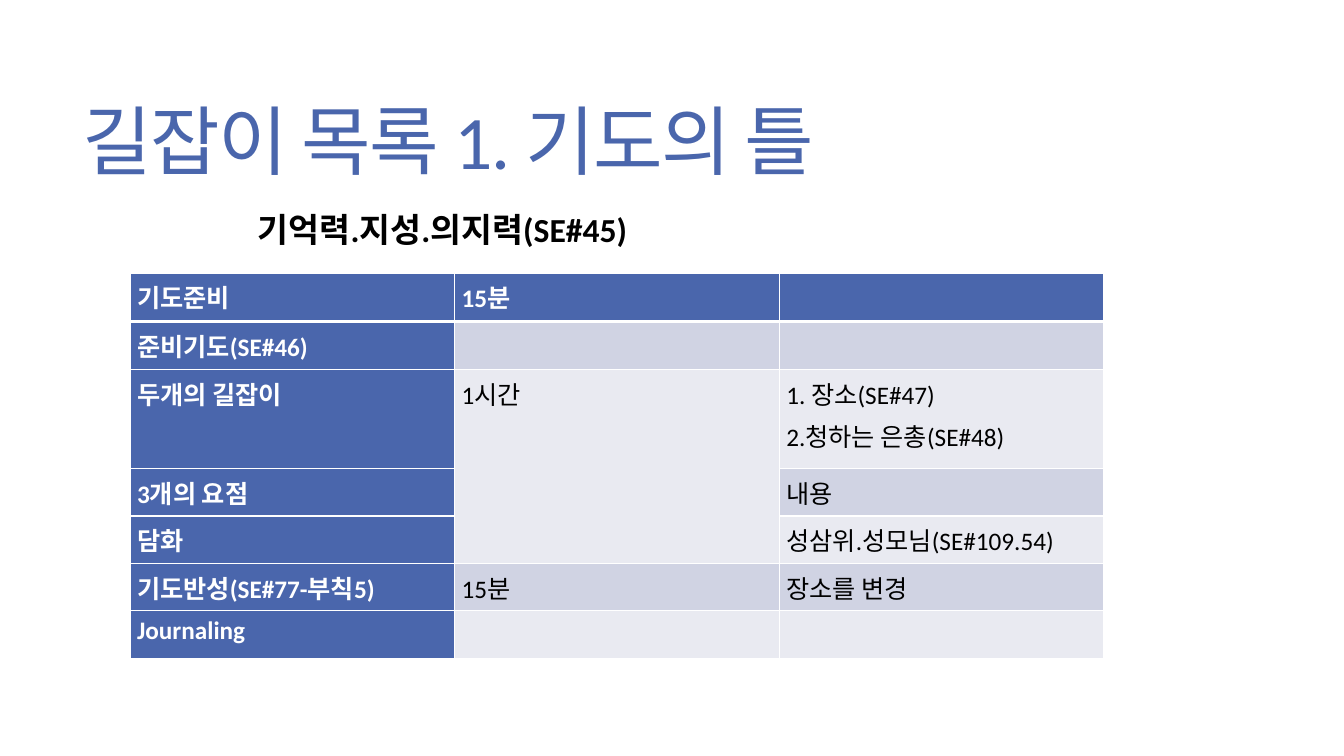
from dataclasses import dataclass

from lxml import etree
from pptx import Presentation
from pptx.dml.color import RGBColor
from pptx.enum.text import MSO_ANCHOR, MSO_AUTO_SIZE, PP_ALIGN
from pptx.oxml.ns import qn
from pptx.util import Inches, Pt

MIDDLE = MSO_ANCHOR.MIDDLE
TOP = MSO_ANCHOR.TOP
LEFT = PP_ALIGN.LEFT
NO_FIT = MSO_AUTO_SIZE.NONE
GROW = MSO_AUTO_SIZE.SHAPE_TO_FIT_TEXT


@dataclass(frozen=True)
class Theme:
    font: str = "Calibri"
    blue: str = "4A66AC"
    dark: str = "D0D3E3"
    light: str = "E9EAF1"
    white: str = "FFFFFF"
    black: str = "000000"
    title: int = 54
    lead: int = 24
    body: int = 18


THEME = Theme()

ROWS = [
    (0.48, "기도준비", "15분", ""),
    (0.48, "준비기도(SE#46)", "", ""),
    (0.98, "두개의 길잡이", "1시간", "1. 장소(SE#47)\n2.청하는 은총(SE#48)"),
    (0.47, "3개의 요점", "", "내용"),
    (0.47, "담화", "", "성삼위.성모님(SE#109.54)"),
    (0.47, "기도반성(SE#77-부칙5)", "15분", "장소를 변경"),
    (0.48, "Journaling", "", ""),
]
MERGE = (2, 4)


def add_run(para, text, size, color, bold=False):
    run = para.add_run()
    run.text = text
    font = run.font
    font.name = THEME.font
    font.size = Pt(size)
    font.bold = bold
    font.color.rgb = RGBColor.from_string(color)
    return run


def add_title(slide, box):
    shape = slide.shapes.title
    shape.left, shape.top, shape.width, shape.height = map(Inches, box)
    frame = shape.text_frame
    frame.word_wrap = True
    frame.auto_size = NO_FIT
    frame.vertical_anchor = MIDDLE
    para = frame.paragraphs[0]
    para.alignment = LEFT
    para.line_spacing = 0.85
    run = add_run(para, "길잡이 목록 1. 기도의 틀", THEME.title, THEME.blue)
    run._r.get_or_add_rPr().set("spc", "-120")


def add_lead(slide, box):
    frame = slide.shapes.add_textbox(*map(Inches, box)).text_frame
    frame.word_wrap = True
    frame.auto_size = GROW
    frame.vertical_anchor = MIDDLE
    add_run(frame.paragraphs[0], "기억력.지성.의지력(SE#45)",
            THEME.lead, THEME.black, True)


def set_edges(cell, widths):
    props = cell._tc.get_or_add_tcPr()
    for spot, (side, width) in enumerate(widths.items()):
        line = etree.Element(qn(f"a:ln{side}"), w=str(Pt(width)))
        fill = etree.SubElement(line, qn("a:solidFill"))
        etree.SubElement(fill, qn("a:srgbClr"), val=THEME.white)
        props.insert(spot, line)


def fill_cell(cell, text, row, col):
    head = row == 0 or col == 0
    band = THEME.dark if row % 2 else THEME.light
    cell.fill.solid()
    cell.fill.fore_color.rgb = RGBColor.from_string(THEME.blue if head else band)
    cell.margin_left = cell.margin_right = Inches(0.07)
    cell.margin_top = cell.margin_bottom = 0
    cell.vertical_anchor = TOP
    set_edges(cell, {"L": 1, "R": 1, "T": 3 if row == 1 else 1,
                     "B": 3 if row == 0 else 1})
    if not text:
        return
    frame = cell.text_frame
    for spot, part in enumerate(text.split("\n")):
        para = frame.add_paragraph() if spot else frame.paragraphs[0]
        para.line_spacing = 1.15
        add_run(para, part, THEME.body,
                THEME.white if head else THEME.black, head)


def add_grid(slide, box):
    count = len(ROWS[0]) - 1
    table = slide.shapes.add_table(len(ROWS), count, *map(Inches, box)).table
    for col in table.columns:
        col.width = Inches(box[2] / count)
    for row, (height, *texts) in enumerate(ROWS):
        table.rows[row].height = Inches(height)
        for col, text in enumerate(texts):
            fill_cell(table.cell(row, col), text, row, col)
    first, last = MERGE
    table.cell(first, 1).merge(table.cell(last, 1))


def main():
    deck = Presentation()
    deck.slide_width = Inches(13.33)
    deck.slide_height = Inches(7.5)
    slide = deck.slides.add_slide(deck.slide_layouts[5])
    add_title(slide, (0.72, 0.55, 11.78, 1.81))
    add_grid(slide, (1.29, 2.71, 9.66, 3.83))
    add_lead(slide, (2.46, 2.02, 5.17, 0.5))
    deck.save("out.pptx")


if __name__ == "__main__":
    main()
